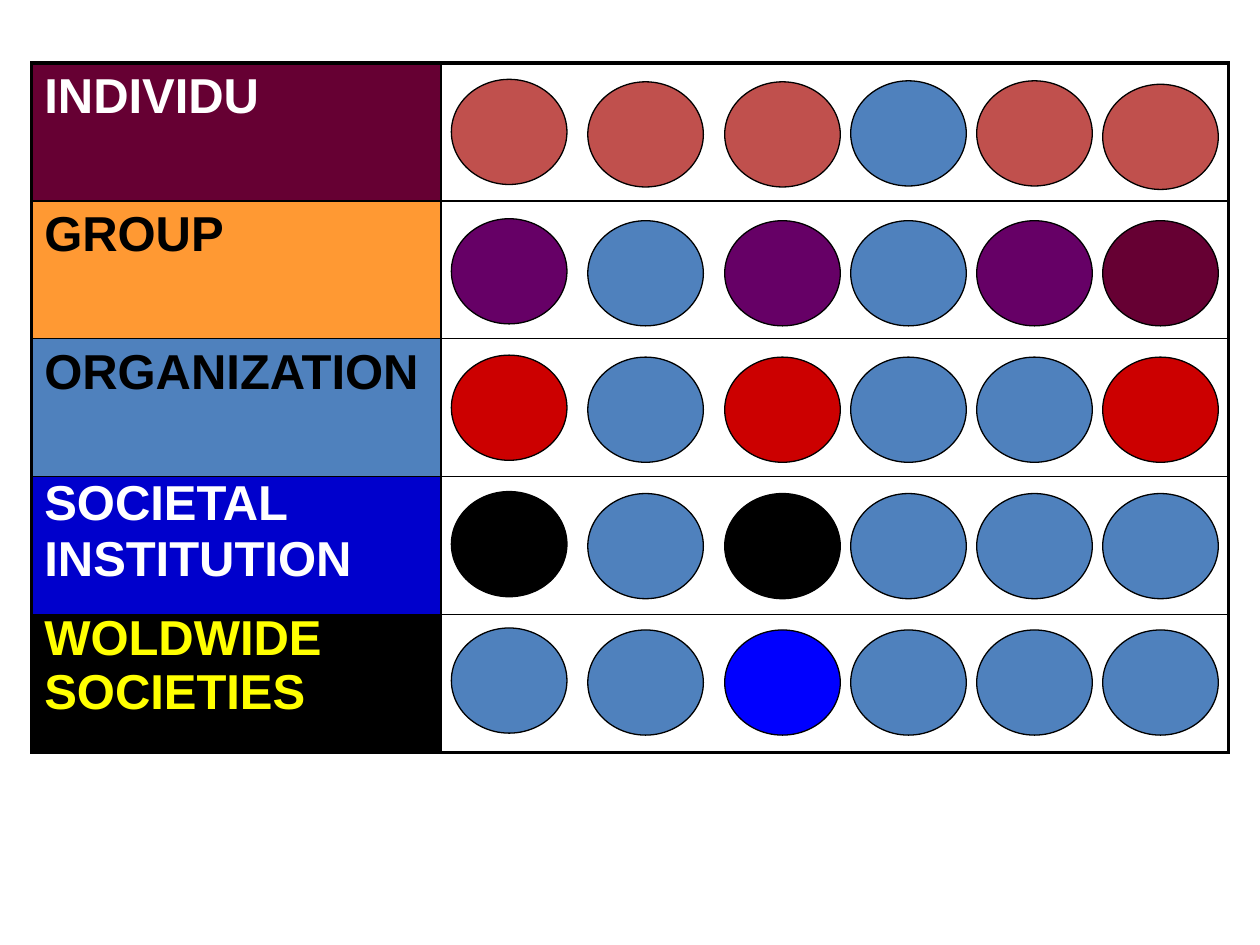
from lxml import etree
from pptx import Presentation
from pptx.dml.color import RGBColor
from pptx.enum.shapes import MSO_SHAPE
from pptx.oxml.ns import qn
from pptx.util import Cm, Pt

OVAL = MSO_SHAPE.OVAL
WHITE = RGBColor(0xFF, 0xFF, 0xFF)
BLACK = RGBColor(0x00, 0x00, 0x00)
YELLOW = RGBColor(0xFF, 0xFF, 0x00)
ORANGE = RGBColor(0xFF, 0x99, 0x33)
MAROON = RGBColor(0x66, 0x00, 0x33)
PURPLE = RGBColor(0x66, 0x00, 0x66)
BRICK = RGBColor(0xC0, 0x50, 0x4D)
RED = RGBColor(0xCC, 0x00, 0x00)
STEEL = RGBColor(0x4F, 0x81, 0xBD)
NAVY = RGBColor(0x00, 0x00, 0xCC)
BLUE = RGBColor(0x00, 0x00, 0xFF)


def write_text(tf, text, color, spacing=1.0, size=28, font="Arial", bold=True):
    for i, line in enumerate(text.split("\n")):
        p = tf.paragraphs[0] if i == 0 else tf.add_paragraph()
        p.line_spacing = spacing
        p.space_before = Pt(size * 0.2)
        r = p.add_run()
        r.text = line
        r.font.name = font
        r.font.size = Pt(size)
        r.font.bold = bold
        r.font.color.rgb = color


def set_borders(cell, widths):
    tc_pr = cell._tc.get_or_add_tcPr()
    for i, (side, width) in enumerate(widths.items()):
        ln = etree.Element(qn("a:ln" + side), w=str(Pt(width)))
        fill = etree.SubElement(ln, qn("a:solidFill"))
        etree.SubElement(fill, qn("a:srgbClr"), val=str(BLACK))
        tc_pr.insert(i, ln)


prs = Presentation()
prs.slide_width, prs.slide_height = Cm(25.4), Cm(19.05)
s = prs.slides.add_slide(prs.slide_layouts[6])

# Levels: label, text colour, line spacing, cell fill, circle colours
levels = [
    ("INDIVIDU", WHITE, 1.0, MAROON, [BRICK, BRICK, BRICK, STEEL, BRICK, BRICK]),
    ("GROUP", BLACK, 1.0, ORANGE, [PURPLE, STEEL, PURPLE, STEEL, PURPLE, MAROON]),
    ("ORGANIZATION", BLACK, 1.0, STEEL, [RED, STEEL, RED, STEEL, STEEL, RED]),
    ("SOCIETAL\nINSTITUTION", WHITE, 0.85, NAVY,
     [BLACK, STEEL, BLACK, STEEL, STEEL, STEEL]),
    ("WOLDWIDE\nSOCIETIES", YELLOW, 0.8, BLACK,
     [STEEL, STEEL, BLUE, STEEL, STEEL, STEEL]),
]
last = len(levels) - 1

# Table with a thick frame and thin inner lines
table = s.shapes.add_table(len(levels), 2, Cm(0.64), Cm(1.27),
                           Cm(24.13), Cm(13.9)).table
table.first_row = table.horz_banding = False
table.columns[0].width, table.columns[1].width = Cm(8.25), Cm(15.88)
for row, (label, color, spacing, fill, _) in enumerate(levels):
    table.rows[row].height = Cm(2.78)
    name_cell, circle_cell = table.cell(row, 0), table.cell(row, 1)
    name_cell.fill.solid()
    name_cell.fill.fore_color.rgb = fill
    circle_cell.fill.background()
    write_text(name_cell.text_frame, label, color, spacing=spacing)
    top = 2.25 if row == 0 else 1
    bottom = 2.25 if row == last else 1
    set_borders(name_cell, {"L": 2.25, "R": 1, "T": top, "B": bottom})
    set_borders(circle_cell, {"L": 1, "R": 2.25, "T": top, "B": bottom})

# Circles: even rows, with the first row and first column slightly raised
lefts = [9.1, 11.85, 14.61, 17.15, 19.69, 22.23]
first_row_tops = [1.6, 1.65, 1.65, 1.63, 1.63, 1.7]
for row, level in enumerate(levels):
    for col, color in enumerate(level[-1]):
        if row == 0:
            top = first_row_tops[col]
        else:
            top = 1.7 + 2.75 * row - (0.04 if col == 0 else 0)
        sp = s.shapes.add_shape(OVAL, Cm(lefts[col]), Cm(top), Cm(2.33), Cm(2.12))
        sp.shadow.inherit = False
        sp.fill.solid()
        sp.fill.fore_color.rgb = color
        sp.line.color.rgb = BLACK
        sp.line.width = Pt(0.75)

prs.save("out.pptx")
